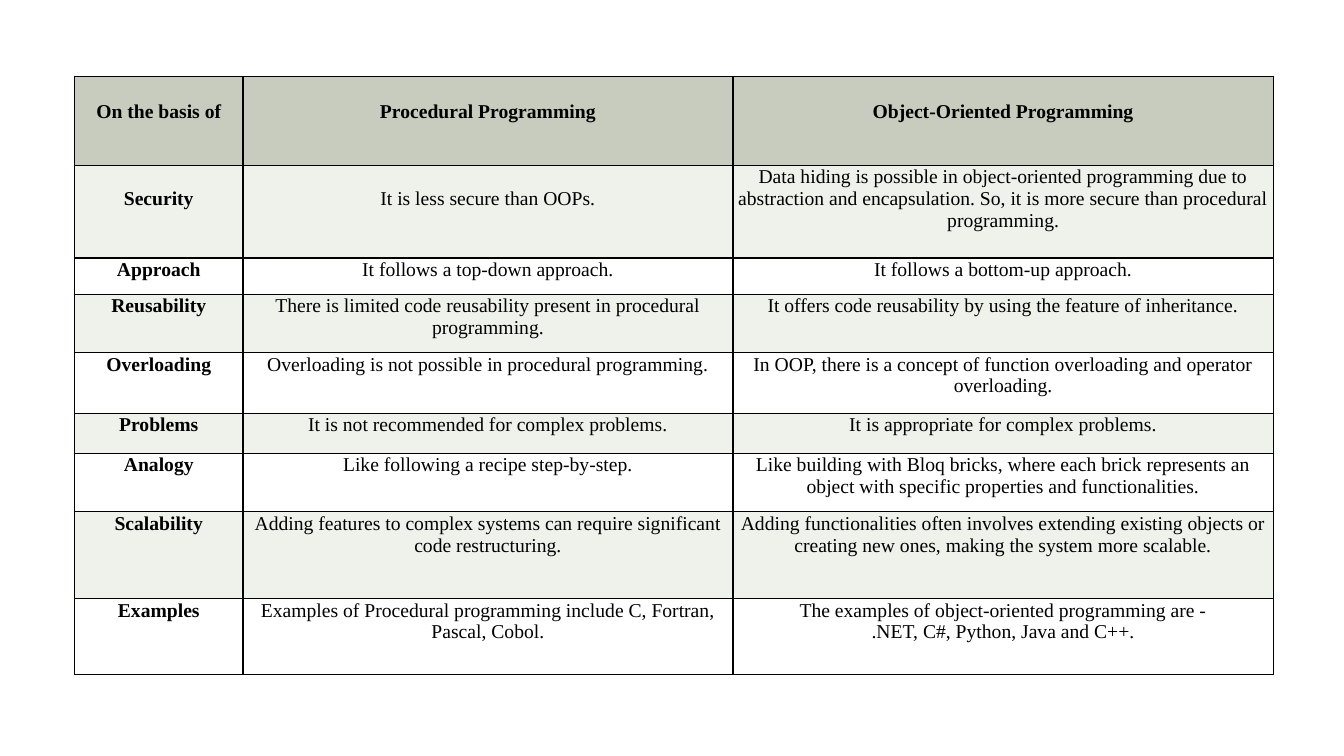
from copy import deepcopy
from dataclasses import dataclass

from pptx import Presentation
from pptx.dml.color import RGBColor
from pptx.enum.text import MSO_ANCHOR, PP_ALIGN
from pptx.oxml import parse_xml
from pptx.oxml.ns import nsdecls, qn
from pptx.util import Inches, Pt

CENTER = PP_ALIGN.CENTER
TOP = MSO_ANCHOR.TOP


@dataclass(frozen=True)
class Theme:
    """Colours, font and sizes of the slide."""
    font: str = "Times New Roman"
    size: int = 14
    ink: str = "000000"
    header: str = "C7CCBE"
    band: str = "EFF1EB"
    plain: str = "FFFFFF"
    border_width: int = 1


THEME = Theme()
BOX = (0.74, 0.76, 11.89, 5.93)
COLUMN_WIDTHS = (1.67, 4.86, 5.36)
ROW_HEIGHTS = (0.88, 0.92, 0.36, 0.58, 0.6, 0.4, 0.58, 0.86, 0.75)
PADDING = 0.01
HEADER_PADDING = 0.02
LINE_DROP = 0.22
DROPPED_CELLS = {(0, 0), (0, 1), (0, 2), (1, 0), (1, 1)}

COMPARISON = (
    ("On the basis of", "Procedural Programming", "Object-Oriented Programming"),
    ("Security", "It is less secure than OOPs.",
     "Data hiding is possible in object-oriented programming due to abstraction "
     "and encapsulation. So, it is more secure than procedural programming."),
    ("Approach", "It follows a top-down approach.", "It follows a bottom-up approach."),
    ("Reusability",
     "There is limited code reusability present in procedural programming.",
     "It offers code reusability by using the feature of inheritance."),
    ("Overloading", "Overloading is not possible in procedural programming.",
     "In OOP, there is a concept of function overloading and operator overloading."),
    ("Problems", "It is not recommended for complex problems.",
     "It is appropriate for complex problems."),
    ("Analogy", "Like following a recipe step-by-step.",
     "Like building with Bloq bricks, where each brick represents an object "
     "with specific properties and functionalities."),
    ("Scalability",
     "Adding features to complex systems can require significant code restructuring.",
     "Adding functionalities often involves extending existing objects or creating "
     "new ones, making the system more scalable."),
    ("Examples",
     "Examples of Procedural programming include C, Fortran, Pascal, Cobol.",
     "The examples of object-oriented programming are -\n.NET, C#, Python, Java and C++."),
)


def write_text(frame, text, *, bold=False, size=THEME.size, color=THEME.ink, align=CENTER):
    """Write one formatted paragraph, with line breaks at newlines."""
    frame.word_wrap = True
    paragraph = frame.paragraphs[0]
    paragraph.alignment = align
    for number, line in enumerate(text.split("\n")):
        if number:
            paragraph.add_line_break()
            line_break = paragraph._p.findall(qn("a:br"))[-1]
            line_break.append(deepcopy(run._r.rPr))
        run = paragraph.add_run()
        run.text = line
        run.font.name = THEME.font
        run.font.size = Pt(size)
        run.font.bold = bold
        run.font.color.rgb = RGBColor.from_string(color)


def add_borders(cell):
    """Draw a solid line on all four sides of a cell."""
    properties = cell._tc.get_or_add_tcPr()
    for position, side in enumerate(("lnL", "lnR", "lnT", "lnB")):
        properties.insert(position, parse_xml(
            f'<a:{side} {nsdecls("a")} w="{Pt(THEME.border_width)}">'
            f'<a:solidFill><a:srgbClr val="{THEME.ink}"/></a:solidFill></a:{side}>'))


def format_cell(cell, fill, padding, drop):
    """Set the fill, margins and borders of a cell."""
    cell.fill.solid()
    cell.fill.fore_color.rgb = RGBColor.from_string(fill)
    cell.margin_left = cell.margin_right = cell.margin_bottom = Inches(padding)
    cell.margin_top = Inches(padding + drop)
    cell.vertical_anchor = TOP
    add_borders(cell)


def add_comparison(slide, box):
    """Place the comparison table in its box, scaled to the box size."""
    left, top, width, height = box
    table = slide.shapes.add_table(
        len(COMPARISON), len(COLUMN_WIDTHS),
        Inches(left), Inches(top), Inches(width), Inches(height)).table
    table.horz_banding = False
    for column, share in zip(table.columns, COLUMN_WIDTHS):
        column.width = Inches(width * share / sum(COLUMN_WIDTHS))
    for row, share in zip(table.rows, ROW_HEIGHTS):
        row.height = Inches(height * share / sum(ROW_HEIGHTS))
    for r, entries in enumerate(COMPARISON):
        is_header = r == 0
        fill = THEME.header if is_header else THEME.band if r % 2 else THEME.plain
        padding = HEADER_PADDING if is_header else PADDING
        for c, entry in enumerate(entries):
            cell = table.cell(r, c)
            drop = LINE_DROP if (r, c) in DROPPED_CELLS else 0
            format_cell(cell, fill, padding, drop)
            write_text(cell.text_frame, entry, bold=is_header or c == 0)


def main():
    """Build and save the slide."""
    deck = Presentation()
    deck.slide_width = Inches(13.33)
    deck.slide_height = Inches(7.5)
    slide = deck.slides.add_slide(deck.slide_layouts[6])
    add_comparison(slide, BOX)
    deck.save("out.pptx")


if __name__ == "__main__":
    main()
